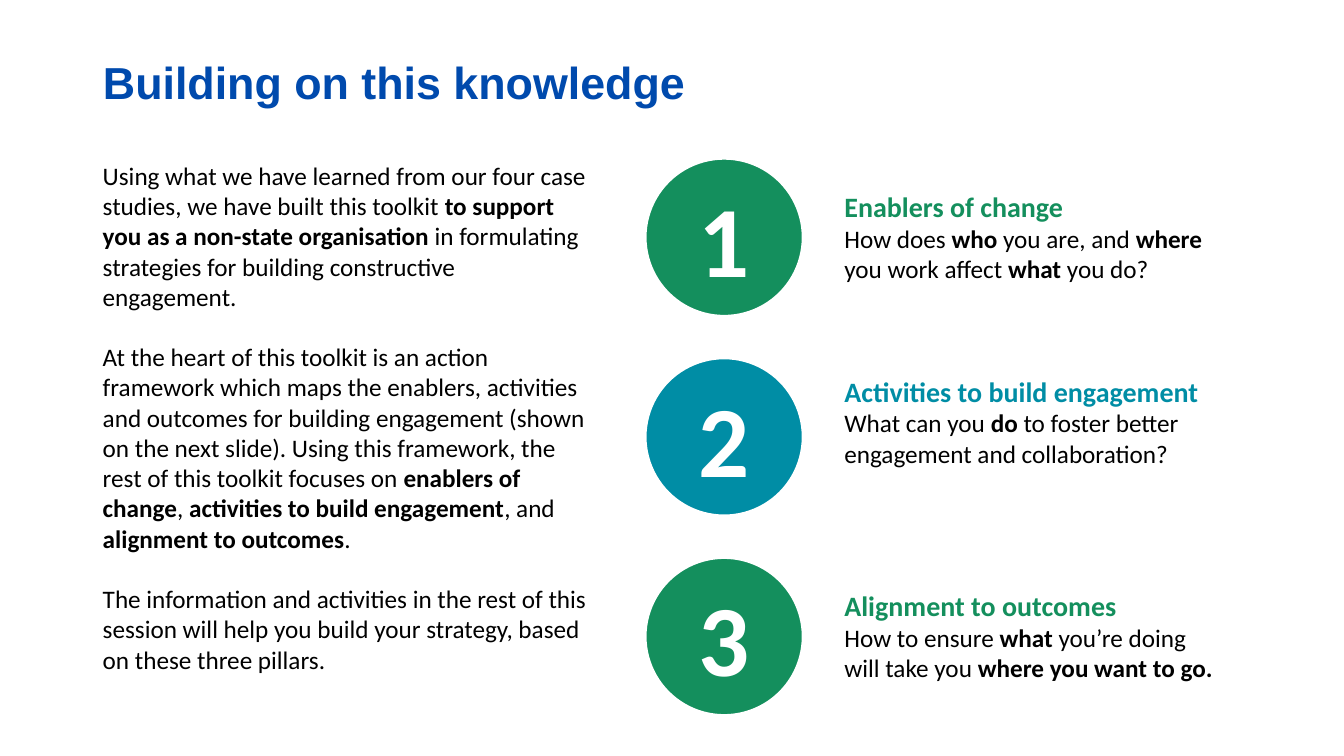
from dataclasses import dataclass

from pptx import Presentation
from pptx import util as u
from pptx.dml.color import RGBColor
from pptx.enum import shapes, text


@dataclass(frozen=True)
class Theme:
    blue: str = "004AAD"
    green: str = "148F5D"
    teal: str = "008DA5"
    black: str = "000000"
    white: str = "FFFFFF"
    title_font: str = "Arial"
    body_font: str = "Calibri"
    title: int = 32
    body: int = 18
    head: int = 20
    digit: int = 72
    gap: float = 21.6
    ring: float = 6.5


def box(left, top, width, height):
    return [u.Cm(n) for n in (left, top, width, height)]


class Deck:
    def __init__(self, theme):
        self.theme = theme
        self.prs = Presentation()
        self.prs.slide_width, self.prs.slide_height = u.Cm(33.87), u.Cm(19.05)
        self.slide = self.prs.slides.add_slide(self.prs.slide_layouts[5])

    def style(self, para, size, color, bold=None, font=None):
        for run in para.runs:
            run.font.name = font or self.theme.body_font
            run.font.size = u.Pt(size)
            run.font.color.rgb = RGBColor.from_string(color)
            if bold is not None:
                run.font.bold = bold

    def rich(self, para, words):
        """Fill a paragraph with body text; words between asterisks are bold."""
        for i, part in enumerate(words.split("*")):
            if part:
                run = para.add_run()
                run.text = part
                run.font.bold = i % 2 == 1
        self.style(para, self.theme.body, self.theme.black)

    def title(self, words, area):
        shape = self.slide.shapes.title
        shape.left, shape.top, shape.width, shape.height = area
        frame = shape.text_frame
        frame.text = words
        frame.word_wrap = True
        frame.auto_size = text.MSO_AUTO_SIZE.NONE
        frame.vertical_anchor = text.MSO_ANCHOR.MIDDLE
        para = frame.paragraphs[0]
        para.alignment = text.PP_ALIGN.LEFT
        para.line_spacing = 0.9
        self.style(para, self.theme.title, self.theme.blue, True, self.theme.title_font)

    def frame(self, area):
        frame = self.slide.shapes.add_textbox(*area).text_frame
        frame.word_wrap = True
        return frame

    def prose(self, paras, area):
        frame = self.frame(area)
        for i, words in enumerate(paras):
            para = frame.add_paragraph() if i else frame.paragraphs[0]
            if i:
                para.space_before = u.Pt(self.theme.gap)
            self.rich(para, words)

    def badge(self, digit, color, area):
        shape = self.slide.shapes.add_shape(shapes.MSO_SHAPE.OVAL, *area)
        shape.shadow.inherit = False
        shape.fill.solid()
        shape.fill.fore_color.rgb = RGBColor.from_string(color)
        shape.line.color.rgb = RGBColor.from_string(self.theme.white)
        shape.line.width = u.Pt(self.theme.ring)
        frame = shape.text_frame
        frame.text = digit
        frame.vertical_anchor = text.MSO_ANCHOR.MIDDLE
        para = frame.paragraphs[0]
        para.alignment = text.PP_ALIGN.CENTER
        self.style(para, self.theme.digit, self.theme.white, True)

    def pillar(self, head, words, color, area):
        frame = self.frame(area)
        frame.text = head
        self.style(frame.paragraphs[0], self.theme.head, color, True)
        self.rich(frame.add_paragraph(), words)


PROSE = [
    "Using what we have learned from our four case studies, we have built this "
    "toolkit *to support you as a non-state organisation* in formulating "
    "strategies for building constructive engagement.",
    "At the heart of this toolkit is an action framework which maps the enablers, "
    "activities and outcomes for building engagement (shown on the next slide). "
    "Using this framework, the rest of this toolkit focuses on *enablers of "
    "change*, *activities to build engagement*, and *alignment to outcomes*.",
    "The information and activities in the rest of this session will help you "
    "build your strategy, based on these three pillars.",
]


def main():
    theme = Theme()
    deck = Deck(theme)
    left, top, size, pitch = 2.34, 3.91, 4.14, 5.03
    pillars = [
        ("Enablers of change",
         "How does *who* you are, and *where* you work affect *what* you do?",
         theme.green, 4.65, 9.63),
        ("Activities to build engagement",
         "What can you *do* to foster better engagement and collaboration?",
         theme.teal, 9.3, 9.63),
        ("Alignment to outcomes",
         "How to ensure *what* you’re doing will take you *where you want to go.*",
         theme.green, 14.71, 9.98),
    ]
    deck.title("Building on this knowledge", box(left, 1.02, 17.25, 2.26))
    deck.prose(PROSE, box(left, top, 12.88, 13.34))
    for i, (head, words, color, y, width) in enumerate(pillars):
        deck.badge(str(i + 1), color, box(16.18, top + i * pitch, size, size))
        deck.pillar(head, words, color, box(21.03, y, width, 2.64))
    deck.prs.save("out.pptx")


if __name__ == "__main__":
    main()
